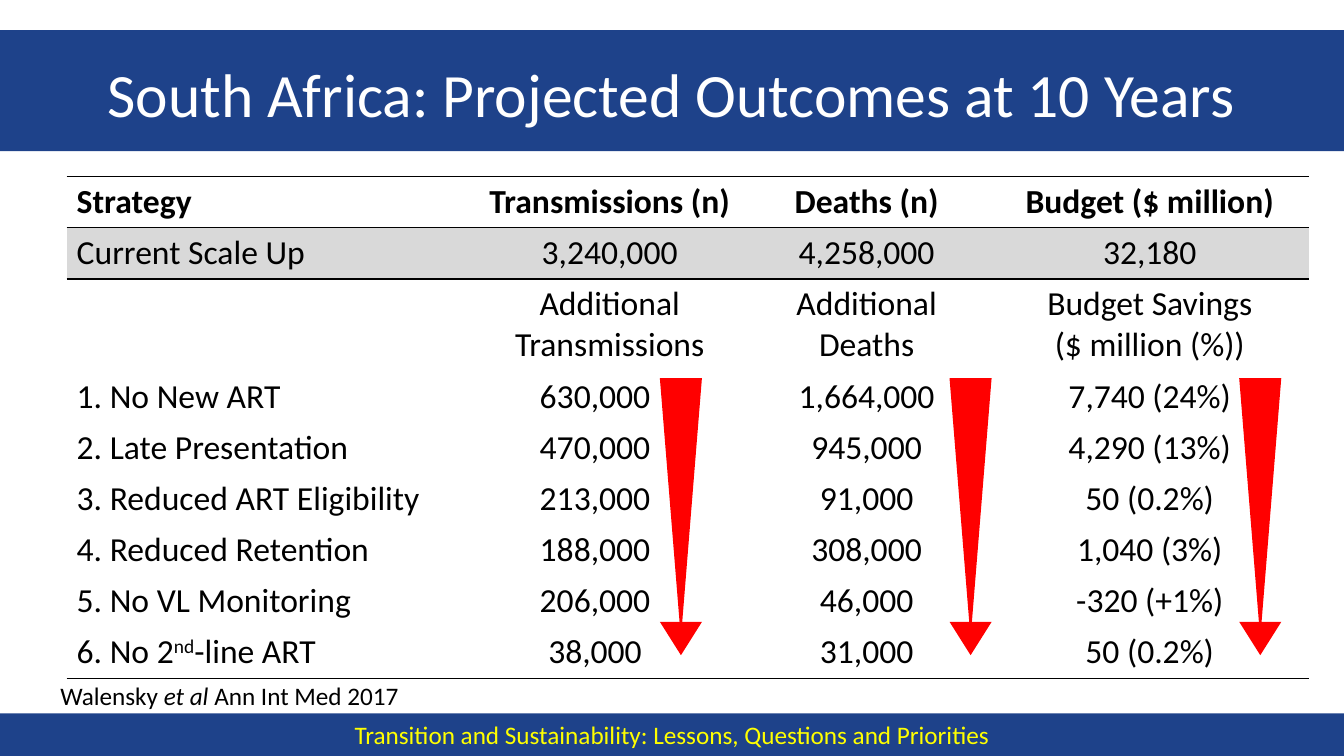
from lxml.etree import SubElement
from pptx import Presentation
from pptx.dml.color import RGBColor
from pptx.enum.shapes import MSO_SHAPE
from pptx.enum.text import MSO_ANCHOR, PP_ALIGN
from pptx.oxml.ns import qn
from pptx.util import Cm, Pt

NAVY = RGBColor(0x1E, 0x42, 0x8A)
YELLOW = RGBColor(0xFF, 0xFF, 0x00)
WHITE = RGBColor(0xFF, 0xFF, 0xFF)
BLACK = RGBColor(0x00, 0x00, 0x00)
GREY = RGBColor(0xD9, 0xD9, 0xD9)
RED = RGBColor(0xFF, 0x00, 0x00)

PLAIN_TABLE_STYLE = "{2D5ABB26-0587-4C30-8999-92F81FD0307C}"
COLUMN_WIDTHS = (9.58, 0.74, 6.73, 6.22, 8.05)
ROW_HEIGHT = 1.29
SUBHEADING_HEIGHT = 2.32
SUBHEADING_ROW = 2

OUTCOMES = (
    ("Strategy", "Transmissions (n)", "Deaths (n)", "Budget ($ million)"),
    ("Current Scale Up", "3,240,000", "4,258,000", "32,180"),
    ("", "Additional Transmissions", "Additional Deaths",
     "Budget Savings\n($ million (%))"),
    ("1. No New ART", "630,000", "1,664,000", "7,740 (24%)"),
    ("2. Late Presentation", "470,000", "945,000", "4,290 (13%)"),
    ("3. Reduced ART Eligibility", "213,000", "91,000", "50 (0.2%)"),
    ("4. Reduced Retention", "188,000", "308,000", "1,040 (3%)"),
    ("5. No VL Monitoring", "206,000", "46,000", "-320 (+1%)"),
    (("6. No 2", ("nd", {"superscript": True}), "-line ART"),
     "38,000", "31,000", "50 (0.2%)"),
)
LAST_ROW = len(OUTCOMES) - 1
RULED_EDGES = {0: ("a:lnT", "a:lnB"), 1: ("a:lnT", "a:lnB"), LAST_ROW: ("a:lnB",)}


def set_values(target, values):
    for name, value in values.items():
        setattr(target, name, value)


def add_span(para, text, size, color, superscript=False, **values):
    span = para.add_run()
    span.text = text
    set_values(span.font, {"name": "Calibri", "size": Pt(size), **values})
    span.font.color.rgb = color
    if superscript:
        span.font._element.set("baseline", "30000")


def write_para(para, pieces, size, color, align=PP_ALIGN.LEFT, **values):
    para.alignment = align
    for piece in (pieces,) if isinstance(pieces, str) else pieces:
        text, extra = (piece, {}) if isinstance(piece, str) else piece
        add_span(para, text, size, color, **{**values, **extra})


def add_solid(shapes, kind, left, top, width, height, color):
    shape = shapes.add_shape(kind, Cm(left), Cm(top), Cm(width), Cm(height))
    shape.shadow.inherit = False
    shape.fill.solid()
    shape.fill.fore_color.rgb = color
    shape.line.fill.background()
    return shape


def add_text(page, left, top, width, height, pieces, size, color,
             align=PP_ALIGN.LEFT, anchor=MSO_ANCHOR.TOP):
    box = page.shapes.add_textbox(Cm(left), Cm(top), Cm(width), Cm(height))
    set_values(box.text_frame, {"word_wrap": True, "vertical_anchor": anchor})
    write_para(box.text_frame.paragraphs[0], pieces, size, color, align)


def rule_cell(cell, edges):
    properties = cell._tc.get_or_add_tcPr()
    for edge in edges:
        line = SubElement(properties, qn(edge), w=str(Pt(1)))
        fill = SubElement(line, qn("a:solidFill"))
        SubElement(fill, qn("a:srgbClr"), val=str(BLACK))


def fill_cell(cell, color):
    if color is None:
        cell.fill.background()
    else:
        cell.fill.solid()
        cell.fill.fore_color.rgb = color


def write_cell(cell, content, align, bold):
    lines = content.split("\n") if isinstance(content, str) else [content]
    for index, pieces in enumerate(lines):
        frame = cell.text_frame
        para = frame.add_paragraph() if index else frame.paragraphs[0]
        if pieces:
            write_para(para, pieces, 24, BLACK, align, bold=bold)
        else:
            para.font.size = Pt(24)


def add_outcome_table(page):
    frame = page.shapes.add_table(
        len(OUTCOMES), len(COLUMN_WIDTHS), Cm(1.68), Cm(4.45),
        Cm(sum(COLUMN_WIDTHS)), Cm(LAST_ROW * ROW_HEIGHT + SUBHEADING_HEIGHT))
    table = frame.table
    set_values(table, {"first_row": False, "horz_banding": False})
    table._tbl.tblPr.find(qn("a:tableStyleId")).text = PLAIN_TABLE_STYLE
    for column, width in zip(table.columns, COLUMN_WIDTHS):
        column.width = Cm(width)
    for row, contents in enumerate(OUTCOMES):
        is_subheading = row == SUBHEADING_ROW
        table.rows[row].height = Cm(SUBHEADING_HEIGHT if is_subheading else ROW_HEIGHT)
        for cell in table.rows[row].cells:
            rule_cell(cell, RULED_EDGES.get(row, ()))
            fill_cell(cell, GREY if row == 1 else None)
        merge_start = 0 if row <= SUBHEADING_ROW else 1
        table.cell(row, merge_start).merge(table.cell(row, merge_start + 1))
        for column, content in zip((0, 2 - merge_start, 3, 4), contents):
            align = PP_ALIGN.CENTER if column else PP_ALIGN.LEFT
            write_cell(table.cell(row, column), content, align, row == 0)


def add_tapered_arrow(page, left):
    arrow = page.shapes.add_group_shape()
    add_solid(arrow.shapes, MSO_SHAPE.FLOWCHART_MERGE, left, 9.53, 1.06, 6.56, RED)
    head = add_solid(arrow.shapes, MSO_SHAPE.ISOSCELES_TRIANGLE,
                     left, 15.67, 1.06, 0.84, RED)
    head.rotation = 180


def add_bands(page):
    add_solid(page.shapes, MSO_SHAPE.RECTANGLE, 0, 0.76, 33.87, 3.05, NAVY)
    footer = add_solid(page.shapes, MSO_SHAPE.RECTANGLE, 0, 17.98, 33.87, 1.07, NAVY)
    footer.text_frame.vertical_anchor = MSO_ANCHOR.MIDDLE
    write_para(footer.text_frame.paragraphs[0],
               "Transition and Sustainability: Lessons, Questions and Priorities",
               18, YELLOW, PP_ALIGN.CENTER)


def main():
    deck = Presentation()
    set_values(deck, {"slide_width": Cm(33.87), "slide_height": Cm(19.05)})
    page = deck.slides.add_slide(deck.slide_layouts[6])
    add_bands(page)
    add_text(page, 1.69, 0.76, 30.48, 3.18,
             "South Africa: Projected Outcomes at 10 Years",
             44, WHITE, PP_ALIGN.CENTER, MSO_ANCHOR.MIDDLE)
    add_outcome_table(page)
    add_text(page, 1.27, 17.02, 15.67, 1.02,
             ("Walensky ", ("et al", {"italic": True}), " Ann Int Med 2017"),
             18, BLACK)
    for index in range(3):
        add_tapered_arrow(page, 16.63 + index * 7.3)
    deck.save("out.pptx")


if __name__ == "__main__":
    main()
